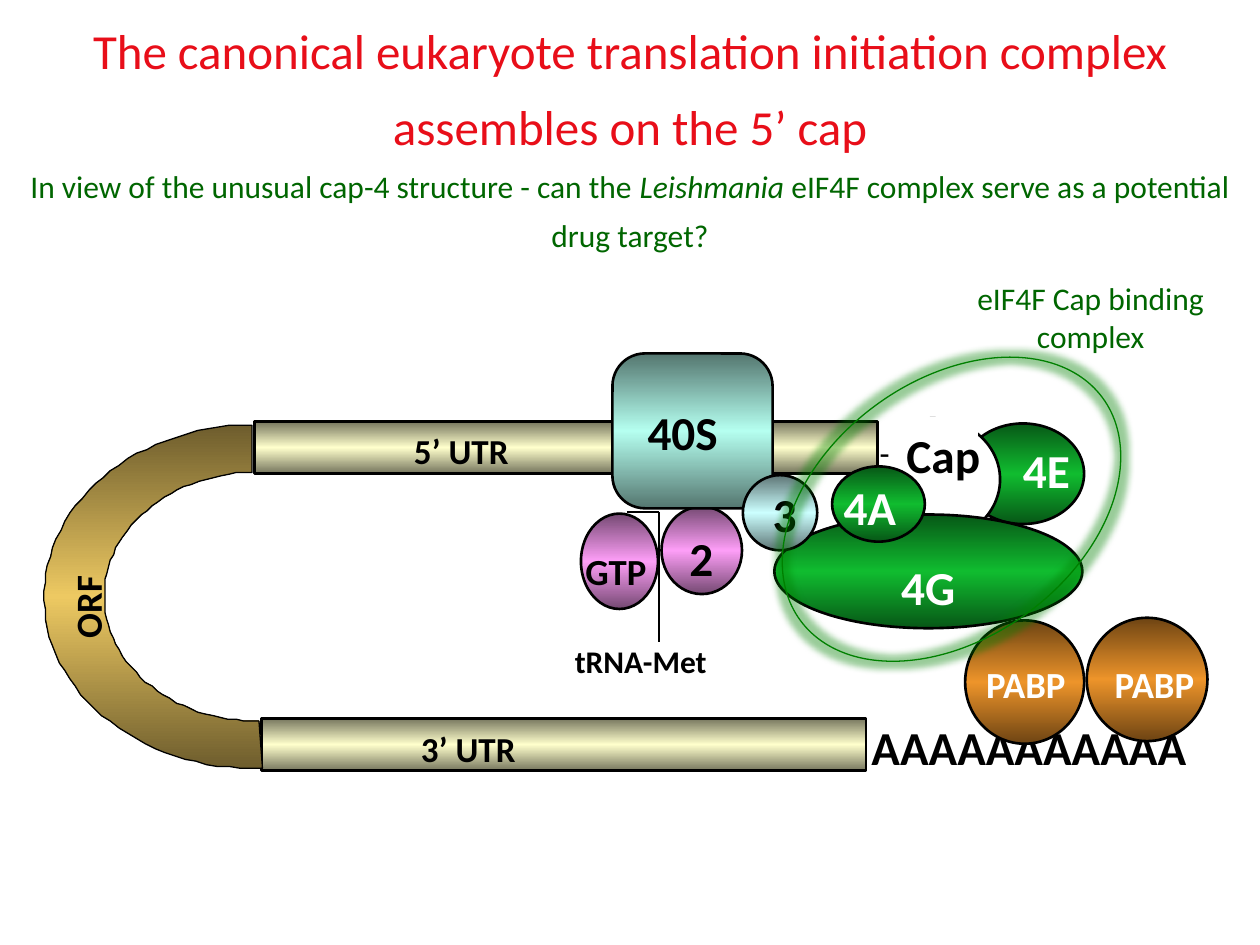
from copy import deepcopy
from dataclasses import dataclass
from math import cos, radians, sin

from pptx import Presentation
from pptx.dml.color import RGBColor
from pptx.enum.shapes import MSO_CONNECTOR, MSO_SHAPE as SHAPE
from pptx.enum.text import MSO_AUTO_SIZE as FIT, PP_ALIGN as ALIGN
from pptx.oxml import parse_xml
from pptx.oxml.ns import nsdecls, qn
from pptx.util import Pt

BLACK, WHITE, GREEN_TEXT = "000000", "FFFFFF", "006600"
# Gradients run edge colour, middle colour, edge colour
GREEN = ("075716", "10BC2F")
CREAM = ("76765E", "FFFFCC")
ORANGE = ("6E4413", "ED942A")
PINK = ("754972", "FD9EF7")
TEAL = ("54766F", "B5FFF0")
AQUA = ("5E7676", "CCFFFF")
GOLD = ("6E5D2D", "EDC962")


@dataclass
class Body:
    x: float
    y: float
    w: float
    h: float
    fill: str | tuple[str, str] | None
    kind: SHAPE = SHAPE.OVAL
    line: str = BLACK
    weight: float = 1.5
    rotation: float = 0


@dataclass
class Label:
    text: str
    x: float
    y: float
    w: float
    h: float
    size: float = 27
    color: str = BLACK
    bold: bool = True
    font: str = "Calibri"
    inset: bool = False
    rotation: float = 0


def rgb(value: str) -> RGBColor:
    return RGBColor.from_string(value)


def style(sp, fill, line: str = BLACK, weight: float = 1.5) -> None:
    sp.shadow.inherit = False
    sp.line.color.rgb = rgb(line)
    sp.line.width = Pt(weight)
    if fill is None:
        sp.fill.background()
    elif isinstance(fill, str):
        sp.fill.solid()
        sp.fill.fore_color.rgb = rgb(fill)
    else:
        edge, middle = fill
        sp.fill.gradient()
        sp.fill.gradient_angle = 90
        stops = sp._element.spPr.find(".//" + qn("a:gsLst"))
        stops.append(deepcopy(stops[0]))
        for stop, pos, color in zip(sp.fill.gradient_stops, (0, 0.5, 1), (edge, middle, edge)):
            stop.position = pos
            stop.color.rgb = rgb(color)


def add_run(p, text: str, *, size: float, color: str = BLACK, font: str = "Calibri",
            bold: bool = False, italic: bool = False) -> None:
    r = p.add_run()
    r.text = text
    f = r.font
    f.name, f.size, f.bold, f.italic = font, Pt(size), bold, italic
    f.color.rgb = rgb(color)


def add_box(shapes, x: float, y: float, w: float, h: float, wrap: bool = True):
    box = shapes.add_textbox(Pt(x), Pt(y), Pt(w), Pt(h))
    box.text_frame.word_wrap = wrap
    box.text_frame.auto_size = FIT.SHAPE_TO_FIT_TEXT
    return box


def draw(shapes, items: list[Body | Label]):
    """Draw the items from back to front and return the last one."""
    sp = None
    for it in items:
        if isinstance(it, Body):
            sp = shapes.add_shape(it.kind, Pt(it.x), Pt(it.y), Pt(it.w), Pt(it.h))
            style(sp, it.fill, it.line, it.weight)
        else:
            sp = add_box(shapes, it.x, it.y, it.w, it.h, wrap=False)
            tf = sp.text_frame
            if not it.inset:
                tf.margin_left = tf.margin_top = tf.margin_right = tf.margin_bottom = 0
            add_run(tf.paragraphs[0], it.text, size=it.size, color=it.color,
                    font=it.font, bold=it.bold)
        sp.rotation = it.rotation
    return sp


def add_line(shapes, x1: float, y1: float, x2: float, y2: float) -> None:
    c = shapes.add_connector(MSO_CONNECTOR.STRAIGHT, Pt(x1), Pt(y1), Pt(x2), Pt(y2))
    c.line.color.rgb = rgb(BLACK)
    c.line.width = Pt(1.5)
    c._element.spPr.append(parse_xml(f"<a:effectLst {nsdecls('a')}/>"))


def add_orf_arc(shapes) -> None:
    """Half ring on the left that joins the two UTR bars."""
    cx, cy = 145.4, 340.9
    first, last, steps = 88, 269.3, 60
    angles = [radians(first + (last - first) * i / steps) for i in range(steps + 1)]
    outer = [(cx + 120.2 * cos(a), cy + 98.3 * sin(a)) for a in angles]
    inner = [(cx + 85.7 * cos(a), cy + 70.9 * sin(a)) for a in reversed(angles)]
    start, *rest = outer + inner
    fb = shapes.build_freeform(*start, scale=Pt(1))
    fb.add_line_segments(rest, close=True)
    style(fb.convert_to_shape(), GOLD, weight=0.75)


def add_glow(sp, color: str, radius: float, alpha: int) -> None:
    effects = sp._element.spPr.find(qn("a:effectLst"))
    effects.append(parse_xml(
        f'<a:glow {nsdecls("a")} rad="{Pt(radius)}"><a:srgbClr val="{color}">'
        f'<a:alpha val="{alpha * 1000}"/></a:srgbClr></a:glow>'))


def main() -> None:
    prs = Presentation()
    prs.slide_width, prs.slide_height = Pt(720), Pt(540)
    s = prs.slides.add_slide(prs.slide_layouts[6])

    # Title and question
    tf = add_box(s.shapes, 0, -2, 720, 158).text_frame
    title, question = tf.paragraphs[0], tf.add_paragraph()
    for p in (title, question):
        p.alignment, p.line_spacing = ALIGN.CENTER, 1.3
    add_run(title, "The canonical eukaryote translation initiation complex "
                   "assembles on the 5’ cap", size=28, color="E80E19")
    for text, italic in (("In view of the unusual cap-4 structure - can the ", False),
                         ("Leishmania", True),
                         (" eIF4F complex serve as a potential drug target?", False)):
        add_run(question, text, size=18, color=GREEN_TEXT, italic=italic)

    # Cap, eIF4 factors, UTR bars and poly(A) tail
    draw(s.shapes, [
        Body(549.5, 242, 70, 57.5, GREEN),
        Body(494.5, 239, 77, 70, WHITE),
        Label("4E", 584.5, 252, 33, 32.5, color=WHITE),
        Body(493, 239, 65, 70.5, WHITE, SHAPE.RECTANGLE, WHITE),
        Body(145.5, 241, 356, 29.5, CREAM, SHAPE.RECTANGLE),
        Body(149.5, 410.5, 345.5, 30, CREAM, SHAPE.RECTANGLE),
        Body(442.5, 294, 176, 65, GREEN),
        Label("AAAAAAAAAAA", 498, 410.5, 214.5, 32.5),
        Label("-", 502.5, 247.5, 7, 21.5, size=18, bold=False, font="Arial"),
        Label("Cap", 518, 243.5, 44.5, 32.5),
        Body(475.5, 266.5, 53, 43, GREEN),
        Label("4A", 482, 273.5, 34.5, 32.5, color=WHITE),
        Label("4G", 515, 319, 36, 32.5, color=WHITE),
        Body(551.5, 354.5, 68, 70.5, ORANGE),
        Body(621, 353, 69, 70.5, ORANGE),
        Label("PABP", 563.5, 378, 58, 25, size=21, color=WHITE),
        Label("PABP", 637, 378, 58, 25, size=21, color=WHITE),
    ])

    # 40S subunit with its factors and initiator tRNA
    subunit = s.shapes.add_group_shape().shapes
    draw(subunit, [
        Body(332, 293.5, 44, 54.5, PINK),
        Body(378, 289.5, 46, 50, PINK),
    ])
    ribosome = draw(subunit, [Body(350, 202, 91.5, 88.5, TEAL, SHAPE.ROUNDED_RECTANGLE)])
    ribosome.adjustments[0] = 0.21
    draw(subunit, [
        Body(424.5, 271.5, 42.5, 43, AQUA),
        Label("2", 394, 302.5, 15, 32.5),
        Label("3", 441.5, 277, 15, 32.5),
        Label("GTP", 334.5, 313.5, 43, 25, size=21),
        Label("40S", 370, 230.5, 48, 32.5),
    ])
    add_line(subunit, 376.5, 292.5, 376.5, 367)
    add_line(subunit, 376.5, 292.5, 358.5, 292.5)
    draw(subunit, [Label("tRNA-Met", 328.5, 367, 91.5, 24, size=18)])

    # UTR and ORF labels
    draw(s.shapes, [
        Label("5’ UTR", 229.5, 242, 78, 31, size=20, inset=True),
        Label("3’ UTR", 233.5, 412, 78, 31, size=20, inset=True),
    ])
    add_orf_arc(s.shapes)
    draw(s.shapes, [Label("ORF", 27.5, 330, 44.5, 25, size=21, rotation=270)])

    # Cap binding complex outline and caption
    ring = draw(s.shapes, [Body(436.5, 217.5, 214.5, 147, None, line="008000",
                                weight=0.75, rotation=323.6)])
    add_glow(ring, "008000", radius=8, alpha=40)
    p = add_box(s.shapes, 528.5, 156, 189.5, 55.5).text_frame.paragraphs[0]
    p.alignment = ALIGN.CENTER
    add_run(p, "eIF4F Cap binding complex", size=18, color=GREEN_TEXT)

    prs.save("out.pptx")


if __name__ == "__main__":
    main()
